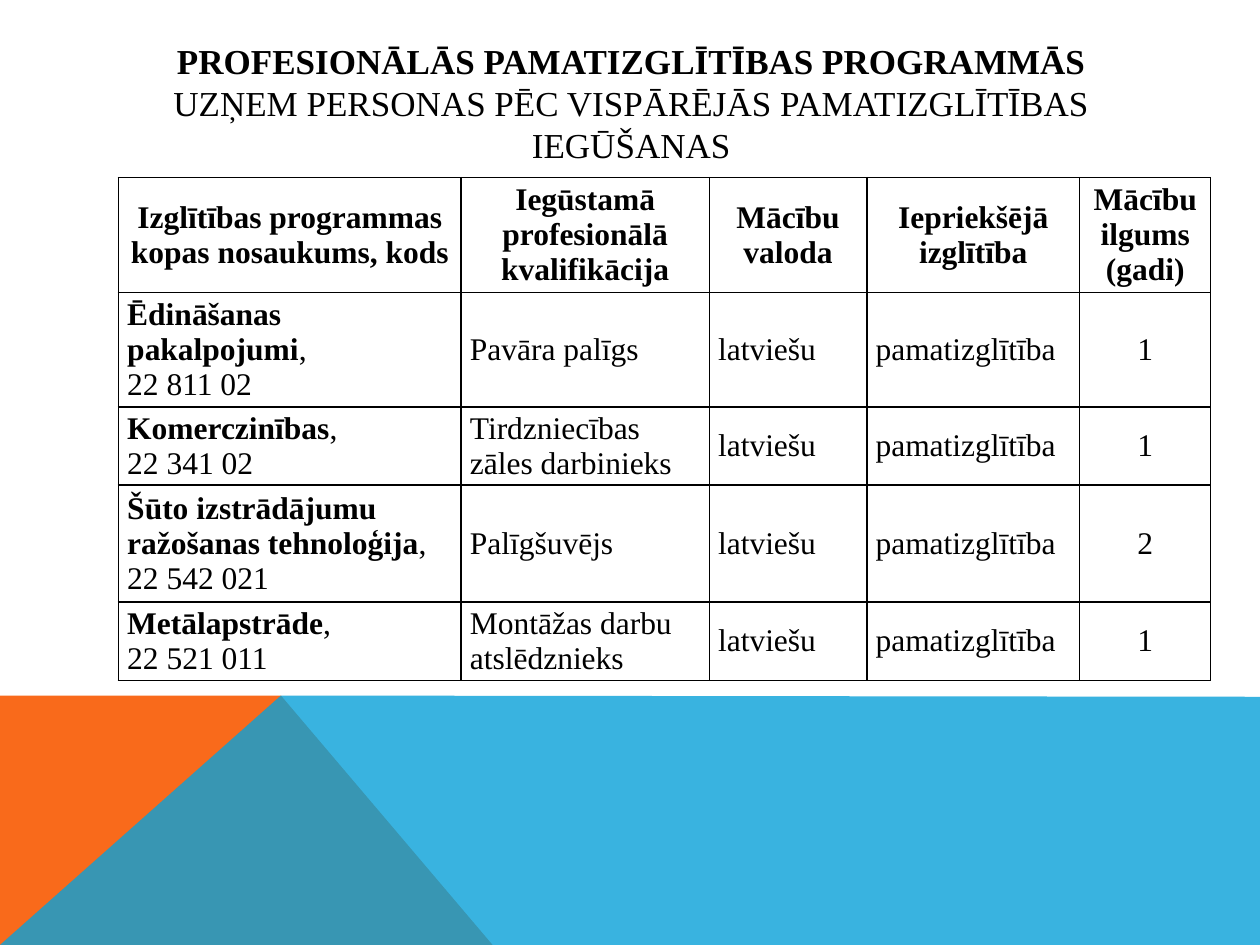
from dataclasses import dataclass

from lxml.etree import SubElement
from pptx import Presentation
from pptx.dml.color import RGBColor
from pptx.enum.text import MSO_ANCHOR as Anchor, MSO_AUTO_SIZE as AutoSize, PP_ALIGN as Align
from pptx.oxml.ns import qn
from pptx.util import Inches, Pt

FONT = "Times New Roman"
BLACK = "000000"
COLUMN_WIDTHS = (2.72, 1.97, 1.25, 1.69, 1.04)
ROW_HEIGHTS = (0.91, 0.91, 0.62, 0.93, 0.62)
HEADERS = (
    "Izglītības programmas kopas nosaukums, kods",
    "Iegūstamā profesionālā kvalifikācija",
    "Mācību valoda",
    "Iepriekšējā izglītība",
    "Mācību ilgums (gadi)",
)


@dataclass(frozen=True)
class Programme:
    name: str
    code: str
    qualification: str
    years: int
    language: str = "latviešu"
    education: str = "pamatizglītība"


@dataclass(frozen=True)
class Band:
    points: tuple[tuple[float, float], ...]
    color: str
    opacity: int = 100


PROGRAMMES = (
    Programme("Ēdināšanas pakalpojumi", "22 811 02", "Pavāra palīgs", 1),
    Programme("Komerczinības", "22 341 02", "Tirdzniecības zāles darbinieks", 1),
    Programme("Šūto izstrādājumu ražošanas tehnoloģija", "22 542 021", "Palīgšuvējs", 2),
    Programme("Metālapstrāde", "22 521 011", "Montāžas darbu atslēdznieks", 1),
)
BANDS = (
    Band(((0, 7.5), (0, 5.52), (2.23, 5.52), (3.91, 7.5)), "F96A1B"),
    Band(((0, 7.5), (2.23, 5.52), (10, 5.53), (10, 7.5)), "08A1D9", 80),
)


def paint(fill, color: str) -> None:
    fill.solid()
    fill.fore_color.rgb = RGBColor.from_string(color)


def add_span(para, text: str, *, size: float = 18, bold: bool = False, color: str = BLACK) -> None:
    span = para.add_run()
    span.text = text
    span.font.name = FONT
    span.font.size = Pt(size)
    span.font.bold = bold
    span.font.color.rgb = RGBColor.from_string(color)


def draw_band(page, band: Band) -> None:
    start, *others = [(Inches(x), Inches(y)) for x, y in band.points]
    builder = page.shapes.build_freeform(*start)
    builder.add_line_segments(others, close=True)
    shape = builder.convert_to_shape()
    shape.shadow.inherit = False
    shape.line.fill.background()
    paint(shape.fill, band.color)
    if band.opacity < 100:
        color = shape.fill._xPr.find(qn("a:solidFill"))[0]
        SubElement(color, qn("a:alpha"), val=str(band.opacity * 1000))


def draw_title(page) -> None:
    title = page.shapes.title
    title.left, title.top = Inches(0.9), Inches(0.23)
    title.width, title.height = Inches(8.22), Inches(1.17)
    frame = title.text_frame
    frame.word_wrap = True
    frame.auto_size = AutoSize.NONE
    frame.vertical_anchor = Anchor.MIDDLE
    para = frame.paragraphs[0]
    para.alignment = Align.CENTER
    add_span(para, "PROFESIONĀLĀS PAMATIZGLĪTĪBAS PROGRAMMĀS ", size=20, bold=True)
    add_span(para, "UZŅEM PERSONAS PĒC VISPĀRĒJĀS PAMATIZGLĪTĪBAS IEGŪŠANAS", size=20)


def style_cell(cell) -> None:
    cell.vertical_anchor = Anchor.MIDDLE
    cell.margin_left = cell.margin_right = Inches(0.07)
    cell.margin_top = cell.margin_bottom = 0
    properties = cell._tc.get_or_add_tcPr()
    for side in ("lnL", "lnR", "lnT", "lnB"):
        border = SubElement(properties, qn(f"a:{side}"), w=str(Pt(1)))
        SubElement(SubElement(border, qn("a:solidFill")), qn("a:srgbClr"), val=BLACK)
    cell.fill.background()


def write_cell(cell, text: str, *, bold: bool = False, align: Align = Align.LEFT) -> None:
    para = cell.text_frame.paragraphs[0]
    para.alignment = align
    add_span(para, text, bold=bold)


def write_programme(cells, programme: Programme) -> None:
    name, qualification, language, education, years = cells
    write_cell(name, programme.name, bold=True)
    add_span(name.text_frame.paragraphs[0], ",")
    add_span(name.text_frame.add_paragraph(), programme.code)
    write_cell(qualification, programme.qualification)
    write_cell(language, programme.language)
    write_cell(education, programme.education)
    write_cell(years, str(programme.years), align=Align.CENTER)


def draw_table(page) -> None:
    frame = page.shapes.add_table(
        len(ROW_HEIGHTS), len(COLUMN_WIDTHS), Inches(0.94), Inches(1.41),
        Inches(sum(COLUMN_WIDTHS)), Inches(sum(ROW_HEIGHTS)),
    )
    table = frame.table
    table.first_row = table.horz_banding = False
    for column, width in zip(table.columns, COLUMN_WIDTHS):
        column.width = Inches(width)
    for row, height in zip(table.rows, ROW_HEIGHTS):
        row.height = Inches(height)
    for cell in table.iter_cells():
        style_cell(cell)
    header, *body = table.rows
    for cell, text in zip(header.cells, HEADERS):
        write_cell(cell, text, bold=True, align=Align.CENTER)
    for row, programme in zip(body, PROGRAMMES):
        write_programme(row.cells, programme)


def main() -> None:
    deck = Presentation()
    deck.slide_width, deck.slide_height = Inches(10), Inches(7.5)
    page = deck.slides.add_slide(deck.slide_layouts[5])
    paint(page.background.fill, "FFFFFF")
    for band in BANDS:
        draw_band(page, band)
    draw_title(page)
    draw_table(page)
    deck.save("out.pptx")


if __name__ == "__main__":
    main()
